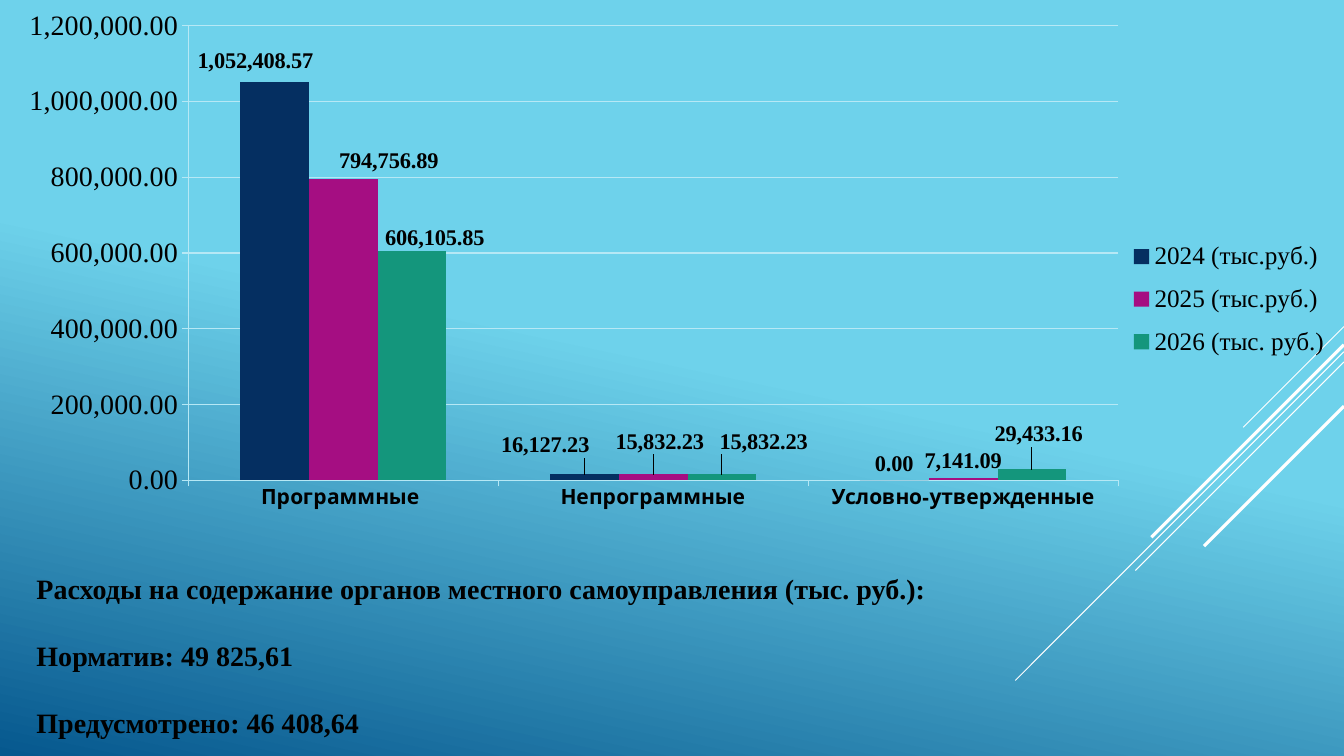
from dataclasses import dataclass

from lxml import etree
from pptx import Presentation
from pptx import util as u
from pptx.chart.data import CategoryChartData
from pptx.dml.color import RGBColor
from pptx.enum import chart as c, shapes, text
from pptx.oxml.ns import qn


@dataclass(frozen=True)
class Theme:
    sky: str = "6ED2EB"
    deep: str = "06588E"
    ink: str = "000000"
    white: str = "FFFFFF"
    grid: str = "B6E8F5"
    bars: tuple = ("052F61", "A50E82", "14967C")
    serif: str = "Times New Roman"
    sans: str = "League Spartan"
    body: int = 20
    legend: int = 18
    label: int = 16
    category: int = 15


CATEGORIES = ["Программные ", "Непрограммные", "Условно-утвержденные"]
SERIES = {
    "2024 (тыс.руб.)": [1052408.57, 16127.23, 0],
    "2025 (тыс.руб.)": [794756.89, 15832.23, 7141.09],
    "2026 (тыс. руб.)": [606105.85, 15832.23, 29433.16],
}
LABEL_SHIFTS = [
    {0: (-0.014, -0.007), 1: (-0.029, -0.021)},
    {0: (0.034, -0.002), 1: (0.005, -0.027)},
    {0: (0.017, 0.007), 1: (0.031, -0.027), 2: (0.005, -0.031)},
]
PLOT_AREA = {"layoutTarget": "inner", "xMode": "edge", "yMode": "edge",
             "x": 0.14, "y": 0.044, "w": 0.692, "h": 0.779}
LEGEND_AREA = {"xMode": "edge", "yMode": "edge",
               "x": 0.837, "y": 0.39, "w": 0.155, "h": 0.245}
STRIPES = [(233.25, 72, 0.75), (251.25, 234.75, 0.75), (258.5, 149, 0.75),
           (246.25, 137.5, 2.25), (290.15, 100, 2.25)]
SPENDING = [
    "Расходы на содержание органов местного самоуправления (тыс. руб.):",
    "Норматив: 49 825,61",
    "Предусмотрено: 46 408,64",
]
NUMBER_FORMAT = "#,##0.00"


def assign(target, values):
    for name, value in values.items():
        setattr(target, name, value)


def manual_layout(values):
    layout = etree.Element(qn("c:layout"))
    manual = etree.SubElement(layout, qn("c:manualLayout"))
    for name, value in values.items():
        etree.SubElement(manual, qn(f"c:{name}")).set("val", str(value))
    return layout


class SlideBuilder:
    """Draws styled elements on the current slide, with lengths in points."""

    def __init__(self, deck, theme):
        self.theme = theme
        self.width = deck.slide_width.pt
        self.page = deck.slides.add_slide(deck.slide_layouts[6])

    def font(self, font, size, color, name, bold=False):
        assign(font, {"size": u.Pt(size), "name": name, "bold": bold})
        font.color.rgb = RGBColor.from_string(color)

    def line(self, line, color, width):
        line.color.rgb = RGBColor.from_string(color)
        line.width = u.Pt(width)

    def background(self):
        fill = self.page.background.fill
        fill.gradient()
        fill.gradient_angle = 258
        stops = ((0.48, self.theme.sky), (1, self.theme.deep))
        for stop, (position, color) in zip(fill.gradient_stops, stops):
            stop.position = position
            stop.color.rgb = RGBColor.from_string(color)

    def stripe(self, top, length, width):
        connector = self.page.shapes.add_connector(
            shapes.MSO_CONNECTOR.STRAIGHT, u.Pt(self.width), u.Pt(top),
            u.Pt(self.width - length), u.Pt(top + length))
        self.line(connector.line, self.theme.white, width)
        etree.SubElement(connector._element.spPr, qn("a:effectLst"))

    def chart(self, left, top, width, height):
        theme = self.theme
        data = CategoryChartData(number_format=NUMBER_FORMAT)
        data.categories = CATEGORIES
        for name, values in SERIES.items():
            data.add_series(name, values)
        chart = self.page.shapes.add_chart(
            c.XL_CHART_TYPE.COLUMN_CLUSTERED, u.Pt(left), u.Pt(top),
            u.Pt(width), u.Pt(height), data).chart
        assign(chart, {"has_title": False, "has_legend": True})
        self.font(chart.font, theme.legend, theme.white, theme.sans)
        plot = chart.plots[0]
        assign(plot, {"gap_width": 150, "overlap": 0,
                      "vary_by_categories": False})
        for series, color, shifts in zip(plot.series, theme.bars, LABEL_SHIFTS):
            self.series(series, color, shifts)
        self.axes(chart)
        self.legend(chart.legend)
        plot_area = chart._chartSpace.chart.plotArea
        for layout in plot_area.findall(qn("c:layout")):
            plot_area.remove(layout)
        plot_area.insert(0, manual_layout(PLOT_AREA))

    def series(self, series, color, shifts):
        theme = self.theme
        series.format.fill.solid()
        series.format.fill.fore_color.rgb = RGBColor.from_string(color)
        place = c.XL_LABEL_POSITION.OUTSIDE_END
        labels = series.data_labels
        assign(labels, {"show_value": True, "number_format": NUMBER_FORMAT,
                        "number_format_is_linked": False, "position": place})
        self.font(labels.font, theme.label, theme.ink, theme.serif, True)
        for index, (x, y) in shifts.items():
            label = series.points[index].data_label
            self.font(label.font, theme.label, theme.ink, theme.serif, True)
            label.position = place
            mark = labels._element.xpath(f"c:dLbl[c:idx/@val={index}]")[0]
            mark.insert(1, manual_layout({"x": x, "y": y}))

    def axes(self, chart):
        theme = self.theme
        values, categories = chart.value_axis, chart.category_axis
        assign(values, {"minimum_scale": 0, "maximum_scale": 1200000,
                        "major_unit": 200000, "has_major_gridlines": True})
        assign(values.tick_labels, {"number_format": NUMBER_FORMAT,
                                    "number_format_is_linked": False})
        self.line(values.major_gridlines.format.line, theme.grid, 0.75)
        for axis in (values, categories):
            axis.major_tick_mark = c.XL_TICK_MARK.OUTSIDE
            self.line(axis.format.line, theme.grid, 0.75)
        self.font(values.tick_labels.font, theme.body, theme.ink, theme.serif)
        self.font(categories.tick_labels.font, theme.category, theme.ink,
                  theme.sans, True)

    def legend(self, legend):
        theme = self.theme
        assign(legend, {"position": c.XL_LEGEND_POSITION.RIGHT,
                        "include_in_layout": False})
        self.font(legend.font, theme.legend, theme.ink, theme.serif)
        element = legend._element
        for layout in element.findall(qn("c:layout")):
            element.remove(layout)
        element.find(qn("c:legendPos")).addnext(manual_layout(LEGEND_AREA))

    def text(self, left, top, width, height, lines):
        theme = self.theme
        box = self.page.shapes.add_textbox(
            u.Pt(left), u.Pt(top), u.Pt(width), u.Pt(height))
        frame = box.text_frame
        assign(frame, {"word_wrap": True,
                       "auto_size": text.MSO_AUTO_SIZE.SHAPE_TO_FIT_TEXT})
        for index, line in enumerate(lines):
            para = frame.add_paragraph() if index else frame.paragraphs[0]
            assign(para, {"line_spacing": 1.5, "space_before": u.Pt(6),
                          "space_after": u.Pt(6)})
            span = para.add_run()
            span.text = line
            self.font(span.font, theme.body, theme.ink, theme.serif, True)


def main():
    deck = Presentation()
    assign(deck, {"slide_width": u.Pt(960), "slide_height": u.Pt(540)})
    slide = SlideBuilder(deck, Theme())
    slide.background()
    for stripe in STRIPES:
        slide.stripe(*stripe)
    slide.chart(0, 0, 960, 417)
    slide.text(19, 392.5, 933, 136, SPENDING)
    deck.save("out.pptx")


if __name__ == "__main__":
    main()
